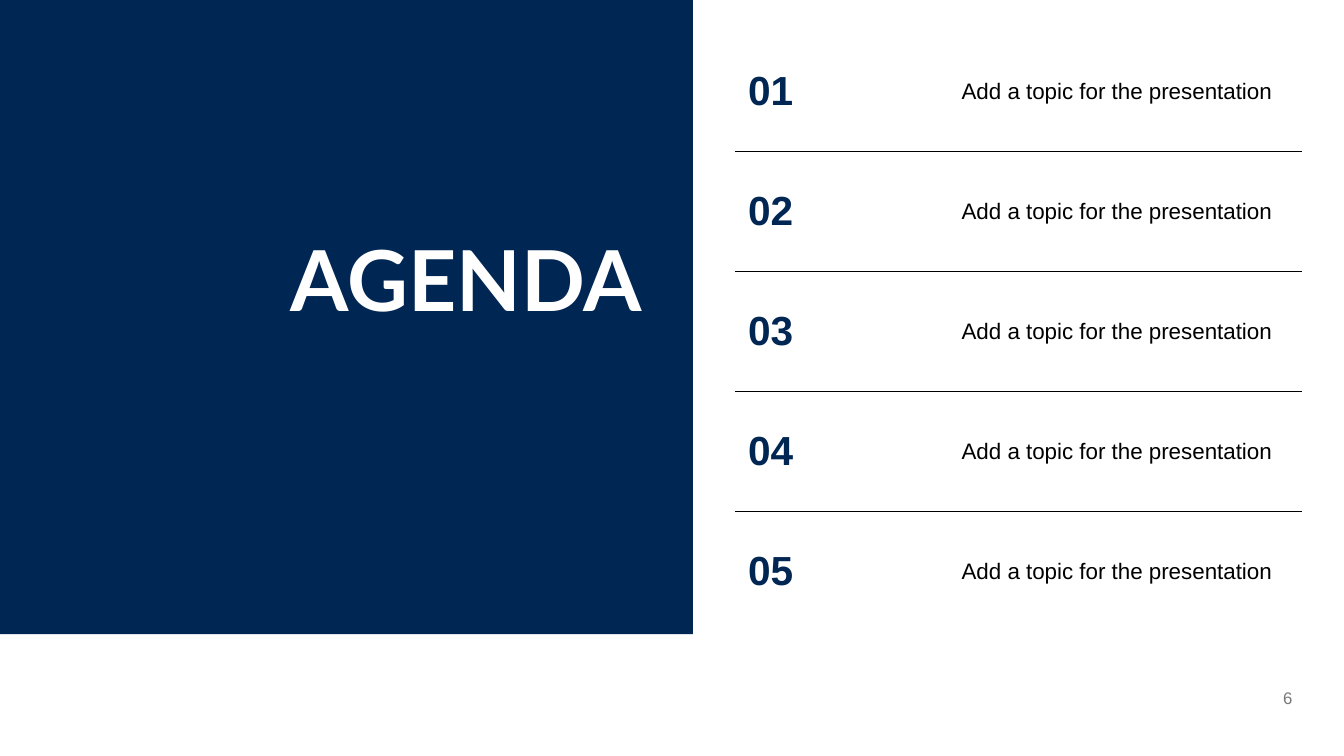
import pptx
import pptx.dml.color
import pptx.enum.shapes
import pptx.enum.text
import pptx.oxml
import pptx.oxml.ns
import pptx.util

Pt = pptx.util.Pt
ALIGN = pptx.enum.text.PP_ALIGN
ANCHOR = pptx.enum.text.MSO_ANCHOR

TITLE = "AGENDA"
PAGE_NUMBER = "6"
TOPICS = ["Add a topic for the presentation"] * 5

NAVY, WHITE, BLACK, GREY = "002654", "FFFFFF", "000000", "797979"

SLIDE_SIZE = (960, 540)
PANEL = (0, 0, 495, 453)
TITLE_BOX = (30.2, 166.3, 435, 72.7)
PAGE_BOX = (893.5, 479.5, 36.7, 38.2)
AGENDA_LEFT, AGENDA_TOP = 525, 22.6
COLUMN_WIDTHS = (152.5, 252.5)
ROW_HEIGHT = 85.7
CELL_MARGIN = 9.4


def color(hex_code):
    return pptx.dml.color.RGBColor.from_string(hex_code)


def add_run(paragraph, text, size, hex_code, font="Arial", bold=False):
    run = paragraph.add_run()
    run.text = text
    run.font.name = font
    run.font.size = Pt(size)
    run.font.bold = bold
    run.font.color.rgb = color(hex_code)


def add_right_text(slide, box, anchor, *run_format):
    """Add a right-aligned text box and return its paragraph."""
    frame = slide.shapes.add_textbox(*map(Pt, box)).text_frame
    frame.word_wrap = True
    frame.vertical_anchor = anchor
    paragraph = frame.paragraphs[0]
    paragraph.alignment = ALIGN.RIGHT
    add_run(paragraph, *run_format)
    return paragraph


def set_borders(cell, ruled_sides):
    """Rule the given sides (letters of LRTB) and clear the others."""
    properties = cell._tc.get_or_add_tcPr()
    for position, side in enumerate("LRTB"):
        if side in ruled_sides:
            paint = f'<a:solidFill><a:srgbClr val="{BLACK}"/></a:solidFill>'
        else:
            paint = "<a:noFill/>"
        border = pptx.oxml.parse_xml(
            f'<a:ln{side} {pptx.oxml.ns.nsdecls("a")} w="{Pt(0.5)}">'
            f"{paint}</a:ln{side}>")
        properties.insert(position, border)


def add_agenda(slide):
    count = len(TOPICS)
    table = slide.shapes.add_table(
        count, 2, Pt(AGENDA_LEFT), Pt(AGENDA_TOP),
        Pt(sum(COLUMN_WIDTHS)), Pt(ROW_HEIGHT * count)).table
    table.first_row = table.horz_banding = False
    for column, width in zip(table.columns, COLUMN_WIDTHS):
        column.width = Pt(width)
    for index, topic in enumerate(TOPICS):
        table.rows[index].height = Pt(ROW_HEIGHT)
        ruled_sides = ("T" if index > 0 else "") + ("B" if index < count - 1 else "")
        entries = [(f"{index + 1:02d}", 29, NAVY, "Arial", True),
                   (topic, 16, BLACK)]
        for cell, entry in zip(table.rows[index].cells, entries):
            cell.fill.background()
            cell.vertical_anchor = ANCHOR.MIDDLE
            cell.margin_left = cell.margin_right = Pt(CELL_MARGIN)
            cell.margin_top = cell.margin_bottom = Pt(CELL_MARGIN)
            set_borders(cell, ruled_sides)
            add_run(cell.text_frame.paragraphs[0], *entry)


def main():
    presentation = pptx.Presentation()
    presentation.slide_width, presentation.slide_height = map(Pt, SLIDE_SIZE)
    slide = presentation.slides.add_slide(presentation.slide_layouts[6])

    panel = slide.shapes.add_shape(
        pptx.enum.shapes.MSO_SHAPE.RECTANGLE, *map(Pt, PANEL))
    panel.shadow.inherit = False
    panel.fill.solid()
    panel.fill.fore_color.rgb = color(NAVY)
    panel.line.fill.background()

    title = add_right_text(slide, TITLE_BOX, ANCHOR.BOTTOM,
                           TITLE, 60, WHITE, "Lato", True)
    title.line_spacing = 0.9
    page = add_right_text(slide, PAGE_BOX, ANCHOR.MIDDLE, PAGE_NUMBER, 12, GREY)
    page.space_after = Pt(6)
    add_agenda(slide)
    presentation.save("out.pptx")


if __name__ == "__main__":
    main()
